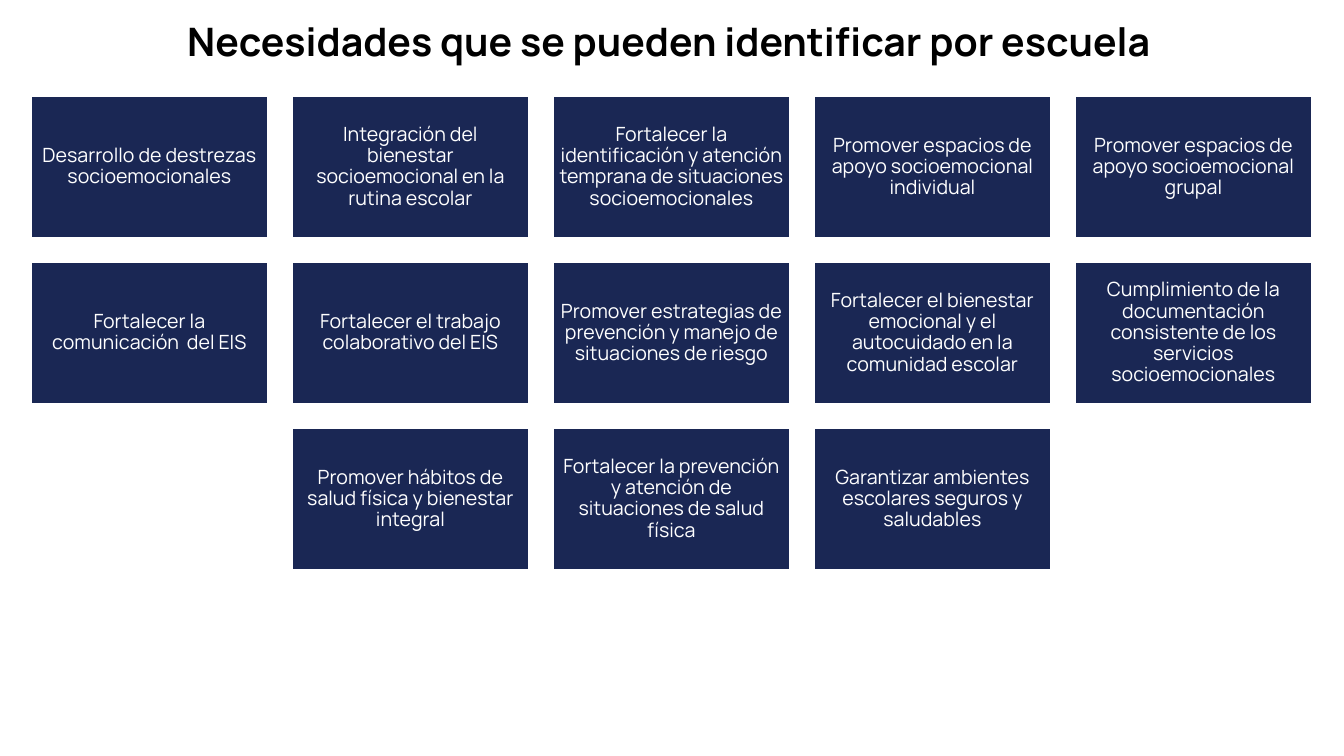
from pptx import Presentation
from pptx.dml.color import RGBColor
from pptx.enum.shapes import MSO_SHAPE
from pptx.enum.text import MSO_ANCHOR, PP_ALIGN
from pptx.util import Emu, Pt

SLIDE_W, SLIDE_H = 1344, 756
CARD_W, CARD_H, GAP, TOP = 237, 142, 24, 96
COLORS = {"navy": "1A2754", "white": "FFFFFF", "black": "000000"}

TITLE = "Necesidades que se pueden identificar por escuela "
NEEDS = [
    [
        "Desarrollo de destrezas socioemocionales",
        "Integración del bienestar socioemocional en la rutina escolar",
        "Fortalecer la identificación y atención temprana de situaciones socioemocionales",
        "Promover espacios de apoyo socioemocional individual",
        "Promover espacios de apoyo socioemocional grupal",
    ],
    [
        "Fortalecer la comunicación  del EIS",
        "Fortalecer el trabajo colaborativo del EIS",
        "Promover estrategias de prevención y manejo de situaciones de riesgo",
        "Fortalecer el bienestar emocional y el autocuidado en la comunidad escolar",
        "Cumplimiento de la documentación consistente de los servicios socioemocionales",
    ],
    [
        "Promover hábitos de salud física y bienestar integral",
        "Fortalecer la prevención y atención de situaciones de salud física",
        "Garantizar ambientes escolares seguros y saludables",
    ],
]


def px(n):
    return Emu(round(n * 914400 / 100.8))


def rgb(name):
    return RGBColor.from_string(COLORS[name])


class Deck:
    font = "Manrope"

    def __init__(self):
        self.prs = Presentation()
        self.prs.slide_width, self.prs.slide_height = px(SLIDE_W), px(SLIDE_H)
        self.s = self.prs.slides.add_slide(self.prs.slide_layouts[6])

    def set_text(self, sp, text, size, color, bold=False):
        tf = sp.text_frame
        tf.word_wrap = True
        tf.vertical_anchor = MSO_ANCHOR.MIDDLE
        p = tf.paragraphs[0]
        p.text = text
        p.alignment = PP_ALIGN.CENTER
        p.line_spacing = 0.9
        p.font.name = self.font
        p.font.size = Pt(size)
        p.font.bold = bold
        p.font.color.rgb = rgb(color)
        return tf

    def title(self, text, x, y, w, h):
        sp = self.s.shapes.add_textbox(px(x), px(y), px(w), px(h))
        self.set_text(sp, text, 28, "black", bold=True)

    def card(self, text, x, y):
        sp = self.s.shapes.add_shape(
            MSO_SHAPE.RECTANGLE, px(x), px(y), px(CARD_W), px(CARD_H))
        sp.shadow.inherit = False
        sp.fill.solid()
        sp.fill.fore_color.rgb = rgb("navy")
        sp.line.color.rgb = rgb("white")
        sp.line.width = Pt(1.5)
        tf = self.set_text(sp, text, 14, "white")
        tf.margin_left = tf.margin_right = px(6)
        tf.margin_top = tf.margin_bottom = px(6)

    def card_row(self, texts, y):
        step = CARD_W + GAP
        left = (SLIDE_W - len(texts) * step + GAP) // 2
        for i, text in enumerate(texts):
            self.card(text, left + i * step, y)


def main():
    deck = Deck()
    deck.title(TITLE, 93, -10, 1159, 107)
    for i, texts in enumerate(NEEDS):
        deck.card_row(texts, TOP + i * (CARD_H + GAP))
    deck.prs.save("out.pptx")


if __name__ == "__main__":
    main()
